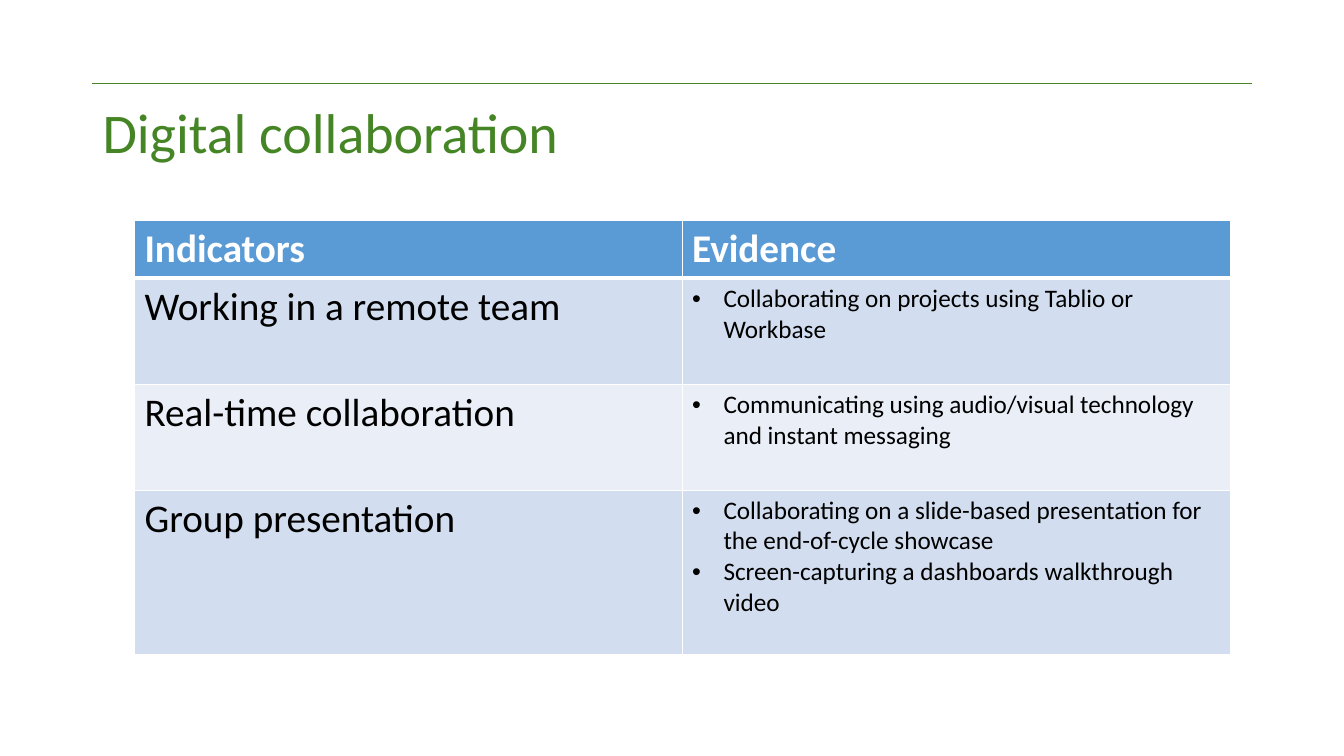
from lxml import etree
from pptx import Presentation
from pptx.dml.color import RGBColor
from pptx.enum.shapes import MSO_CONNECTOR
from pptx.enum.text import MSO_ANCHOR, PP_ALIGN
from pptx.oxml.ns import qn
from pptx.util import Cm, Pt

LINE = MSO_CONNECTOR.STRAIGHT
MIDDLE = MSO_ANCHOR.MIDDLE
LEFT = PP_ALIGN.LEFT

FONT = "Calibri"
GREEN = "458525"
BLUE = "5B9BD5"
BANDS = ["D2DEEF", "EAEFF7"]
WHITE = "FFFFFF"
BLACK = "000000"

HEADS = ["Indicators", "Evidence"]
ROWS = [
    ("Working in a remote team",
     ["Collaborating on projects using Tablio or Workbase"]),
    ("Real-time collaboration",
     ["Communicating using audio/visual technology and instant messaging"]),
    ("Group presentation",
     ["Collaborating on a slide-based presentation for the end-of-cycle showcase",
      "Screen-capturing a dashboards walkthrough video"]),
]
WIDTHS = [13.8, 13.83]
HEIGHTS = [1.42, 2.67, 2.67, 4.14]


def color(code):
    return RGBColor.from_string(code)


def style(para, size, code, bold=False):
    for run in para.runs:
        font = run.font
        font.name = FONT
        font.size = Pt(size)
        font.bold = bold
        font.color.rgb = color(code)


def add_title(slide, left, top, width, height):
    rule = slide.shapes.add_connector(
        LINE, Cm(left), Cm(top), Cm(left + width), Cm(top))
    rule.line.color.rgb = color(GREEN)
    rule.line.width = Pt(0.5)
    etree.SubElement(rule._element.spPr, qn("a:effectLst"))

    title = slide.shapes.title
    title.left, title.top = Cm(left), Cm(top)
    title.width, title.height = Cm(width), Cm(height)
    frame = title.text_frame
    frame.text = "Digital collaboration"
    frame.vertical_anchor = MIDDLE
    para = frame.paragraphs[0]
    para.alignment = LEFT
    para.line_spacing = 0.9
    style(para, 40, GREEN)


def add_bullet(para):
    props = para._p.get_or_add_pPr()
    props.set("marL", str(Cm(0.79)))
    props.set("indent", str(Cm(-0.79)))
    etree.SubElement(props, qn("a:buFont")).set("typeface", "Arial")
    etree.SubElement(props, qn("a:buChar")).set("char", "•")


def add_edges(cell, below):
    props = cell._tc.get_or_add_tcPr()
    for side, width in (("L", 1), ("R", 1), ("T", 1), ("B", below)):
        edge = etree.SubElement(props, qn(f"a:ln{side}"), w=str(Pt(width)))
        fill = etree.SubElement(edge, qn("a:solidFill"))
        etree.SubElement(fill, qn("a:srgbClr"), val=WHITE)


def fill_cell(cell, lines, size, code, back, head=False, listed=False):
    add_edges(cell, 3 if head else 1)
    cell.fill.solid()
    cell.fill.fore_color.rgb = color(back)
    frame = cell.text_frame
    frame.text = "\n".join(lines)
    for para in frame.paragraphs:
        if listed:
            add_bullet(para)
        style(para, size, code, head)


def add_grid(slide, left, top):
    table = slide.shapes.add_table(
        len(HEIGHTS), len(WIDTHS), Cm(left), Cm(top),
        Cm(sum(WIDTHS)), Cm(sum(HEIGHTS))).table
    for col, width in zip(table.columns, WIDTHS):
        col.width = Cm(width)
    for row, height in zip(table.rows, HEIGHTS):
        row.height = Cm(height)
    for col, head in enumerate(HEADS):
        fill_cell(table.cell(0, col), [head], 28, WHITE, BLUE, head=True)
    for row, (label, proofs) in enumerate(ROWS, 1):
        back = BANDS[(row - 1) % 2]
        fill_cell(table.cell(row, 0), [label], 28, BLACK, back)
        fill_cell(table.cell(row, 1), proofs, 18, BLACK, back, listed=True)


def main():
    deck = Presentation()
    deck.slide_width, deck.slide_height = Cm(33.87), Cm(19.05)
    slide = deck.slides.add_slide(deck.slide_layouts[5])
    add_title(slide, 2.33, 2.11, 29.21, 2.58)
    add_grid(slide, 3.39, 5.55)
    deck.save("out.pptx")


if __name__ == "__main__":
    main()
